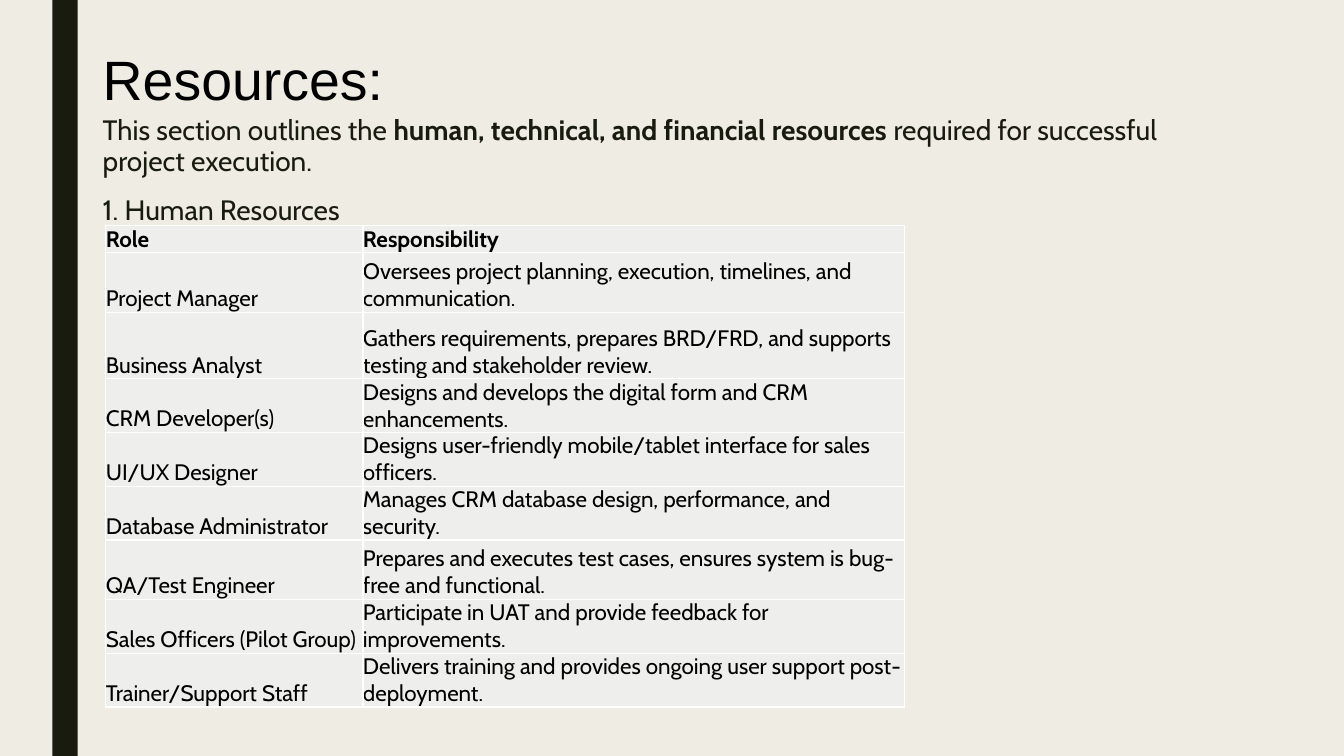
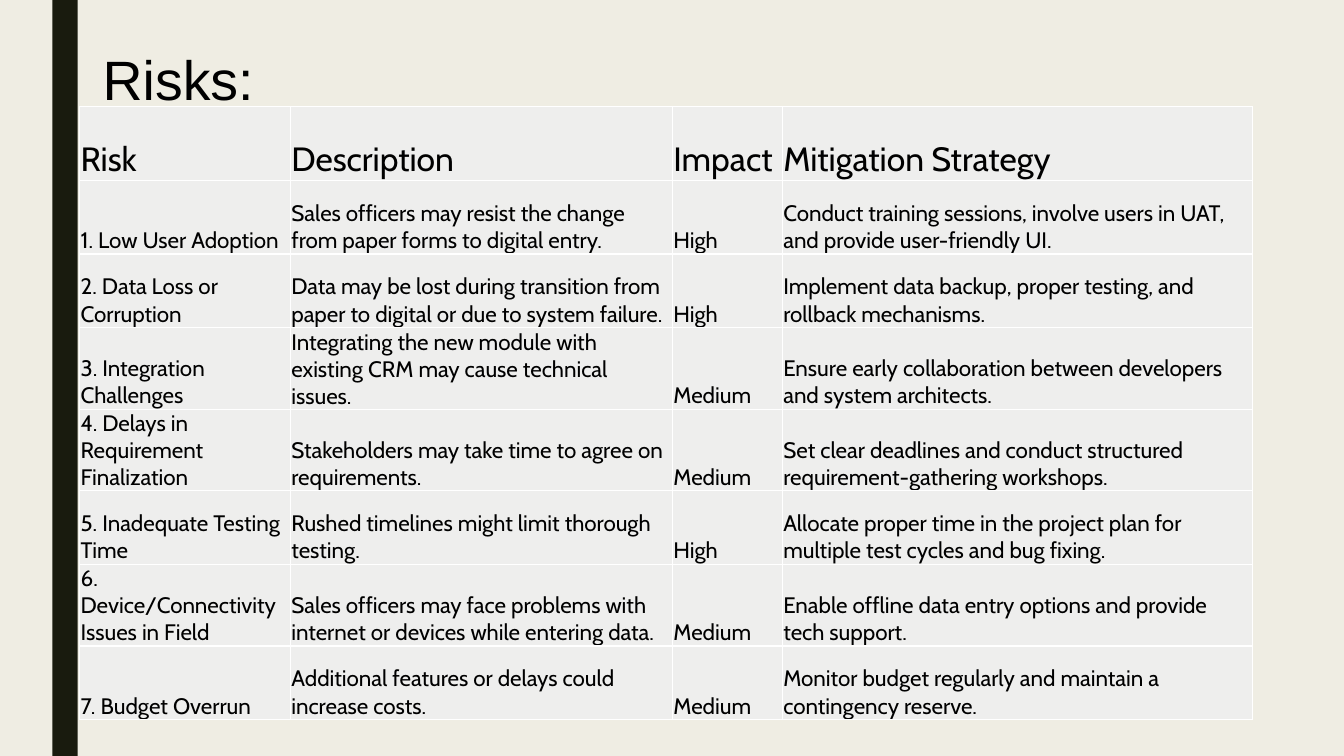
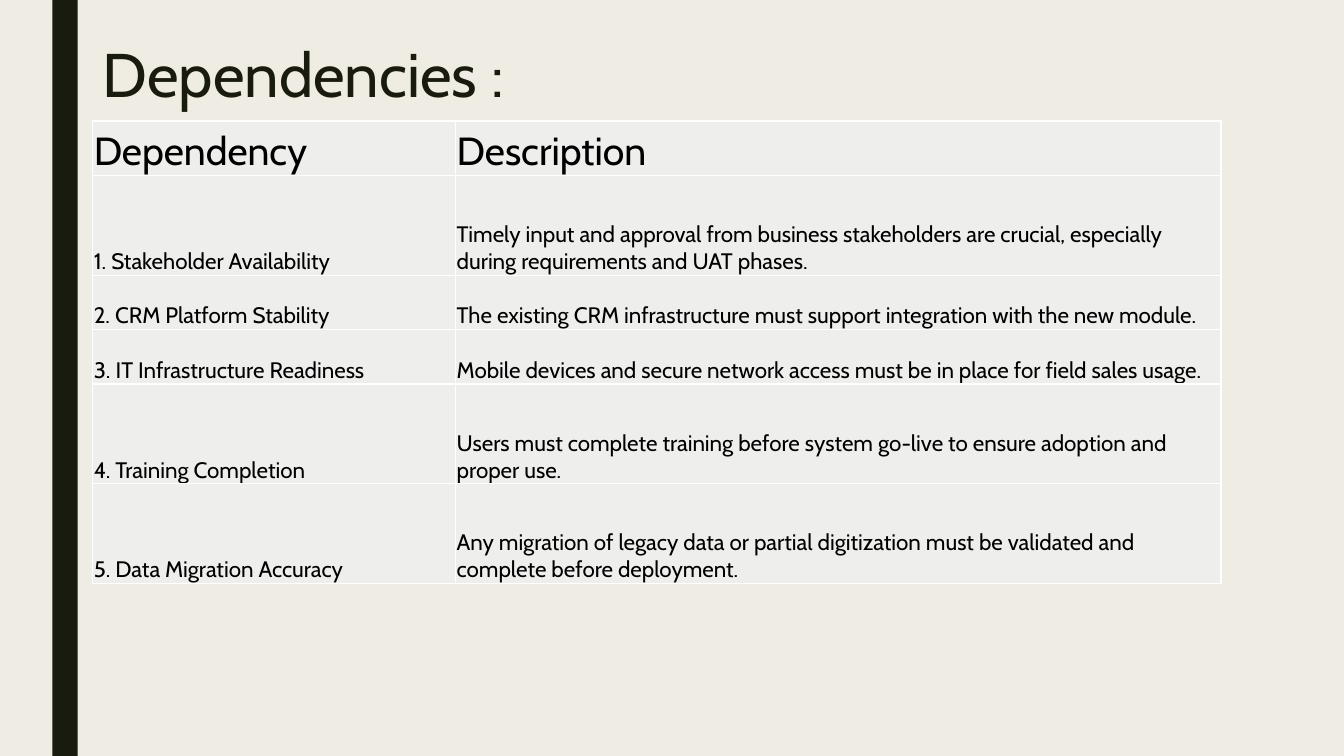
from dataclasses import dataclass

from lxml.etree import SubElement
from pptx import Presentation
from pptx.dml.color import RGBColor
from pptx.enum.shapes import MSO_SHAPE
from pptx.enum.text import MSO_ANCHOR
from pptx.oxml import parse_xml
from pptx.oxml.ns import nsdecls, qn
from pptx.presentation import Presentation as Deck
from pptx.slide import Slide
from pptx.table import _Cell
from pptx.text.text import TextFrame
from pptx.util import Inches, Pt

WIDTH, HEIGHT = 13.33, 7.5
LEFT, TOP = 0.92, 0.4
PAPER, INK, BLACK, CELL, RULE = "EFEDE3", "191B0E", "000000", "EEEEED", "FFFFFF"
FONT = "Cabin"
TEXT_SIZE = 16


@dataclass(frozen=True)
class Title:
    text: str
    width: float
    height: float
    font: str = "Arial"
    size: float = 39.6
    color: str = BLACK
    spacing: float = 1.0


@dataclass(frozen=True)
class Grid:
    left: float
    top: float
    columns: list[float]
    heights: list[float]
    rows: list[tuple[str, ...]]
    header_size: int
    header_bold: bool = False
    inset: float = 0.01


@dataclass(frozen=True)
class Page:
    title: Title
    grid: Grid
    intro: tuple[tuple[tuple[str, bool], ...], ...] = ()


def rgb(value: str) -> RGBColor:
    return RGBColor.from_string(value)


def add_bar(s: Slide) -> None:
    bar = s.shapes.add_shape(
        MSO_SHAPE.RECTANGLE, Inches(0.52), 0, Inches(0.25), Inches(HEIGHT)
    )
    bar.shadow.inherit = False
    bar.fill.solid()
    bar.fill.fore_color.rgb = rgb(INK)
    bar.line.fill.background()


def add_text_frame(s: Slide, top: float, width: float, height: float) -> TextFrame:
    box = s.shapes.add_textbox(Inches(LEFT), Inches(top), Inches(width), Inches(height))
    tf = box.text_frame
    tf.word_wrap = True
    return tf


def add_title(s: Slide, title: Title) -> None:
    p = add_text_frame(s, TOP, title.width, title.height).paragraphs[0]
    p.text = title.text
    p.line_spacing = title.spacing
    p.font.name = title.font
    p.font.size = Pt(title.size)
    p.font.color.rgb = rgb(title.color)


def add_intro(s: Slide, intro: tuple[tuple[tuple[str, bool], ...], ...]) -> None:
    tf = add_text_frame(s, 1.09, 11.5, 5.67)
    tf.margin_right = Inches(0.3)
    for i, parts in enumerate(intro):
        p = tf.paragraphs[0] if i == 0 else tf.add_paragraph()
        p.line_spacing = 0.94
        p.space_before = Pt(10)
        p.space_after = Pt(2)
        p.font.name = FONT
        p.font.size = Pt(20)
        p.font.color.rgb = rgb(INK)
        for text, bold in parts:
            r = p.add_run()
            r.text = text
            r.font.bold = bold


def set_borders(cell: _Cell) -> None:
    props = cell._tc.get_or_add_tcPr()
    for i, side in enumerate(("lnL", "lnR", "lnT", "lnB")):
        line = parse_xml(f'<a:{side} {nsdecls("a")} w="{Pt(1)}"/>')
        fill = SubElement(line, qn("a:solidFill"))
        SubElement(fill, qn("a:srgbClr"), val=RULE)
        props.insert(i, line)


def fill_cell(cell: _Cell, text: str, size: int, bold: bool, inset: float) -> None:
    cell.fill.solid()
    cell.fill.fore_color.rgb = rgb(CELL)
    cell.vertical_anchor = MSO_ANCHOR.BOTTOM
    cell.margin_left = cell.margin_right = cell.margin_top = Inches(inset)
    cell.margin_bottom = 0
    set_borders(cell)
    p = cell.text_frame.paragraphs[0]
    p.text = text
    p.font.name = FONT
    p.font.size = Pt(size)
    p.font.bold = bold
    p.font.color.rgb = rgb(BLACK)


def add_grid(s: Slide, grid: Grid) -> None:
    table = s.shapes.add_table(
        len(grid.rows), len(grid.columns),
        Inches(grid.left), Inches(grid.top),
        Inches(sum(grid.columns)), Inches(sum(grid.heights)),
    ).table
    table.first_row = table.horz_banding = False
    for column, width in zip(table.columns, grid.columns):
        column.width = Inches(width)
    for i, (row, height) in enumerate(zip(table.rows, grid.heights)):
        row.height = Inches(height)
        size = TEXT_SIZE if i else grid.header_size
        bold = grid.header_bold and i == 0
        for cell, text in zip(row.cells, grid.rows[i]):
            fill_cell(cell, text, size, bold, grid.inset)


def add_page(prs: Deck, page: Page) -> None:
    s = prs.slides.add_slide(prs.slide_layouts[6])
    add_bar(s)
    add_title(s, page.title)
    if page.intro:
        add_intro(s, page.intro)
    add_grid(s, page.grid)


RESOURCES = Page(
    Title("Resources:", 9.95, 0.69),
    Grid(
        1.05, 2.24, [2.55, 5.37],
        [0.25, 0.59, 0.66, 0.49, 0.49, 0.52, 0.59, 0.44, 0.52],
        [
            ("Role", "Responsibility"),
            ("Project Manager",
             "Oversees project planning, execution, timelines, and communication."),
            ("Business Analyst",
             "Gathers requirements, prepares BRD/FRD, and supports testing and stakeholder review."),
            ("CRM Developer(s)",
             "Designs and develops the digital form and CRM enhancements."),
            ("UI/UX Designer",
             "Designs user-friendly mobile/tablet interface for sales officers."),
            ("Database Administrator",
             "Manages CRM database design, performance, and security."),
            ("QA/Test Engineer",
             "Prepares and executes test cases, ensures system is bug-free and functional."),
            ("Sales Officers (Pilot Group)",
             "Participate in UAT and provide feedback for improvements."),
            ("Trainer/Support Staff",
             "Delivers training and provides ongoing user support post-deployment."),
        ],
        header_size=TEXT_SIZE, header_bold=True, inset=0,
    ),
    (
        (
            ("This section outlines the ", False),
            ("human, technical, and financial resources", True),
            (" required for successful project execution.", False),
        ),
        (("1. Human Resources", False),),
    ),
)

RISKS = Page(
    Title("Risks:", 11.25, 0.56),
    Grid(
        0.79, 1.06, [2.09, 3.79, 1.09, 4.66], [0.73] * 8,
        [
            ("Risk", "Description", "Impact", "Mitigation Strategy"),
            ("1. Low User Adoption",
             "Sales officers may resist the change from paper forms to digital entry.",
             "High",
             "Conduct training sessions, involve users in UAT, and provide user-friendly UI."),
            ("2. Data Loss or Corruption",
             "Data may be lost during transition from paper to digital or due to system failure.",
             "High",
             "Implement data backup, proper testing, and rollback mechanisms."),
            ("3. Integration Challenges",
             "Integrating the new module with existing CRM may cause technical issues.",
             "Medium",
             "Ensure early collaboration between developers and system architects."),
            ("4. Delays in Requirement Finalization",
             "Stakeholders may take time to agree on requirements.",
             "Medium",
             "Set clear deadlines and conduct structured requirement-gathering workshops."),
            ("5. Inadequate Testing Time",
             "Rushed timelines might limit thorough testing.",
             "High",
             "Allocate proper time in the project plan for multiple test cycles and bug fixing."),
            ("6. Device/Connectivity Issues in Field",
             "Sales officers may face problems with internet or devices while entering data.",
             "Medium",
             "Enable offline data entry options and provide tech support."),
            ("7. Budget Overrun",
             "Additional features or delays could increase costs.",
             "Medium",
             "Monitor budget regularly and maintain a contingency reserve."),
        ],
        header_size=24,
    ),
)

DEPENDENCIES = Page(
    Title("Dependencies :", 10.89, 0.8, FONT, 44, INK, 0.89),
    Grid(
        LEFT, 1.2, [3.6, 7.59], [0.54, 0.99, 0.54, 0.54, 0.99, 0.99],
        [
            ("Dependency", "Description"),
            ("1. Stakeholder Availability",
             "Timely input and approval from business stakeholders are crucial, "
             "especially during requirements and UAT phases."),
            ("2. CRM Platform Stability",
             "The existing CRM infrastructure must support integration with the new module."),
            ("3. IT Infrastructure Readiness",
             "Mobile devices and secure network access must be in place for field sales usage."),
            ("4. Training Completion",
             "Users must complete training before system go-live to ensure adoption and proper use."),
            ("5. Data Migration Accuracy",
             "Any migration of legacy data or partial digitization must be validated and "
             "complete before deployment."),
        ],
        header_size=28,
    ),
)


def main() -> None:
    prs = Presentation()
    prs.slide_width, prs.slide_height = Inches(WIDTH), Inches(HEIGHT)
    background = prs.slide_master.background.fill
    background.solid()
    background.fore_color.rgb = rgb(PAPER)
    for page in (RESOURCES, RISKS, DEPENDENCIES):
        add_page(prs, page)
    prs.save("out.pptx")


if __name__ == "__main__":
    main()
